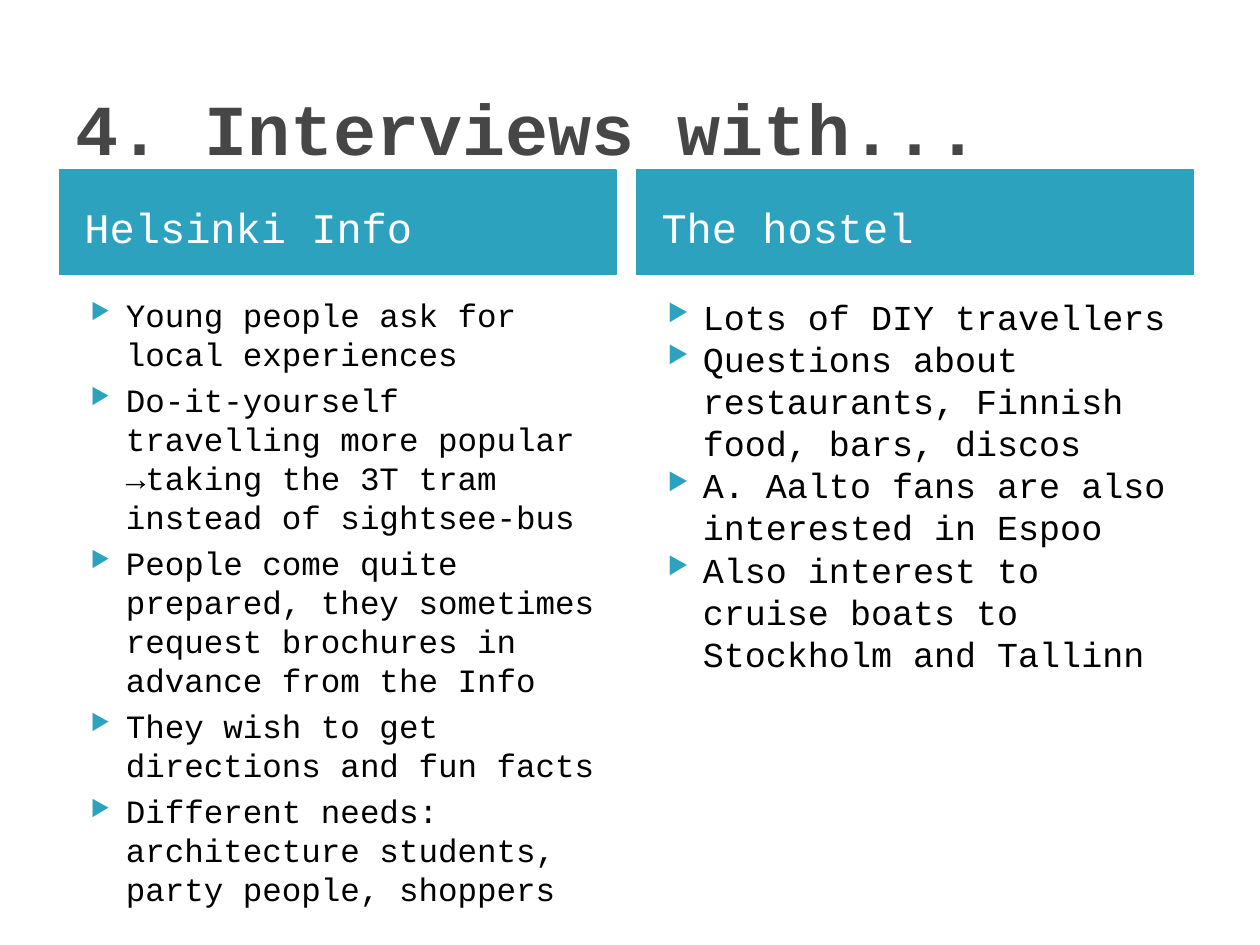
from lxml.etree import SubElement
from pptx import Presentation
from pptx.dml.color import RGBColor
from pptx.enum.shapes import MSO_SHAPE as SHAPE
from pptx.enum.text import MSO_ANCHOR as ANCHOR, PP_ALIGN as ALIGN
from pptx.oxml.ns import qn
from pptx.util import Inches, Pt

TEAL = "2DA2BF"
TITLE = dict(size=Pt(41), bold=True, name="Courier New")
HEADING = dict(size=Pt(24), name="Courier New")


def color(hex_string):
    return RGBColor.from_string(hex_string)


def write(sp, lines, font, hex_color, spacing, before=0, top=0.05, left=0.1,
          anchor=ANCHOR.TOP, bullets=False):
    """Fill a shape with paragraphs; spacing and before are in points."""
    tf = sp.text_frame
    frame = dict(word_wrap=True, vertical_anchor=anchor,
                 margin_left=Inches(left), margin_top=Inches(top))
    for key, value in frame.items():
        setattr(tf, key, value)
    for i, line in enumerate(lines):
        p = tf.paragraphs[0] if i == 0 else tf.add_paragraph()
        p.alignment = ALIGN.LEFT
        p.line_spacing = Pt(spacing)
        if i:
            p.space_before = Pt(before)
        if bullets:
            pPr = p._p.get_or_add_pPr()
            pPr.set("marL", str(Inches(0.4)))
            pPr.set("indent", str(Inches(-0.28)))
            bu_clr = SubElement(pPr, qn("a:buClr"))
            SubElement(bu_clr, qn("a:srgbClr"), val=TEAL)
            SubElement(pPr, qn("a:buSzPct"), val="68000")
            SubElement(pPr, qn("a:buChar"), char="▶")
        r = p.add_run()
        r.text = line
        for key, value in font.items():
            setattr(r.font, key, value)
        r.font.color.rgb = color(hex_color)


prs = Presentation()
prs.slide_width, prs.slide_height = Inches(10), Inches(7.5)
s = prs.slides.add_slide(prs.slide_layouts[6])

title = s.shapes.add_textbox(Inches(0.5), Inches(0.3), Inches(9), Inches(1.25))
write(title, ["4. Interviews with..."], TITLE, "464646", 49, top=0.21,
      anchor=ANCHOR.MIDDLE)

# heading, text size, line spacing, space between items, items
columns = [
    ("Helsinki Info", 18.6, 22.3, 4, [
        "Young people ask for local experiences",
        "Do-it-yourself travelling more popular →taking the 3T tram "
        "instead of sightsee-bus",
        "People come quite prepared, they sometimes request brochures "
        "in advance from the Info",
        "They wish to get directions and fun facts",
        "Different needs: architecture students, party people, shoppers",
    ]),
    ("The hostel", 20, 24.1, 0, [
        "Lots of DIY travellers",
        "Questions about restaurants, Finnish food, bars, discos",
        "A. Aalto fans are also interested in Espoo",
        "Also interest to cruise boats to Stockholm and Tallinn",
    ]),
]

for i, (heading, size, spacing, before, items) in enumerate(columns):
    x = 0.47 + i * 4.58
    sp = s.shapes.add_shape(SHAPE.RECTANGLE, Inches(x), Inches(1.35),
                            Inches(4.42), Inches(0.83))
    sp.shadow.inherit = False
    sp.fill.solid()
    sp.fill.fore_color.rgb = color(TEAL)
    sp.line.color.rgb = color(TEAL)
    sp.line.width = Pt(0.75)
    write(sp, [heading], HEADING, "FFFFFF", 29, top=0.11, left=0.2,
          anchor=ANCHOR.MIDDLE)

    body = s.shapes.add_textbox(Inches(x + 0.03), Inches(2.25),
                                Inches(4.42), Inches(4.31))
    write(body, items, dict(size=Pt(size), name="Courier New"), "000000",
          spacing, before, top=0.09, bullets=True)

prs.save("out.pptx")
